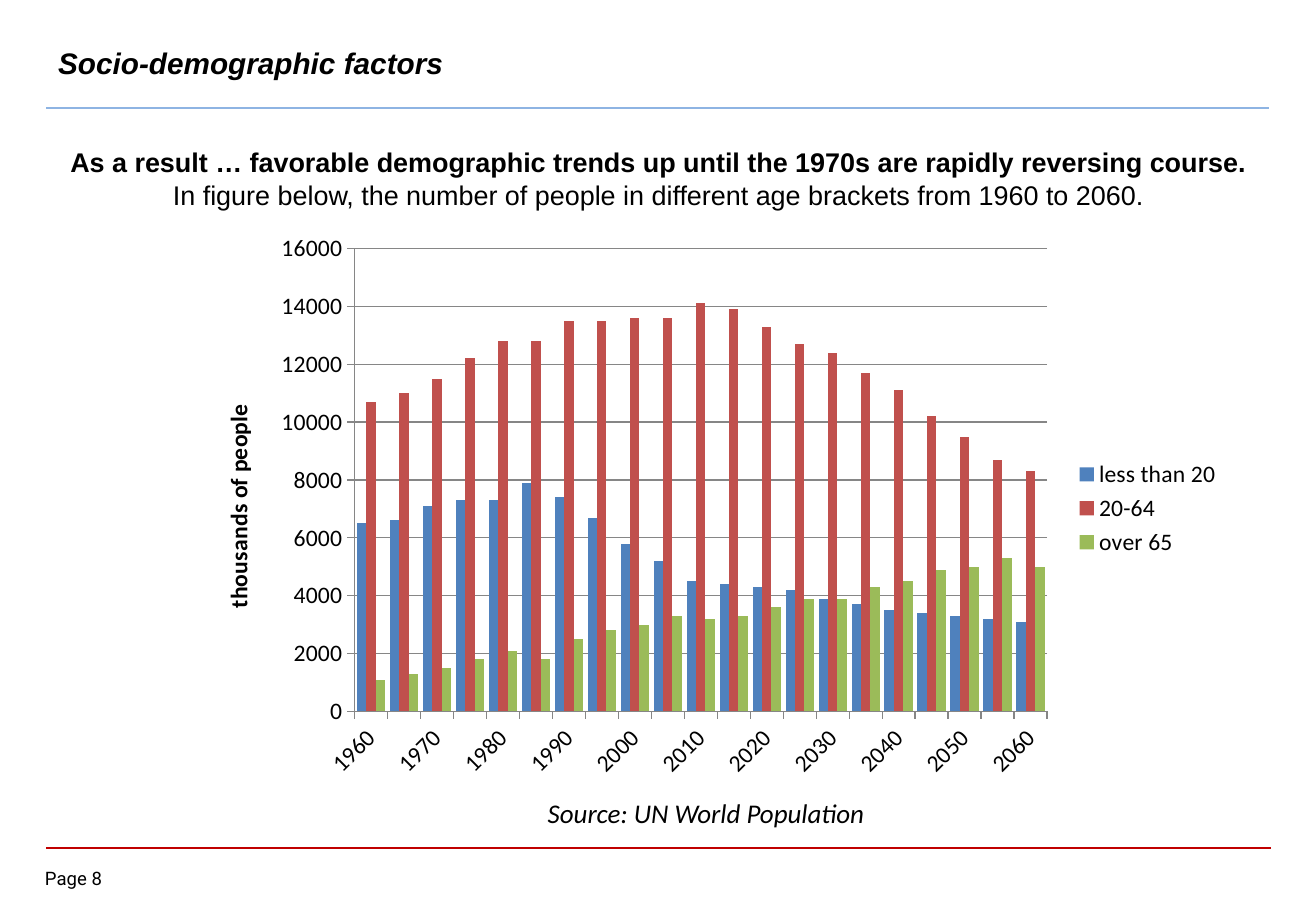
from dataclasses import dataclass

from lxml import etree
from pptx import Presentation
from pptx.chart.axis import _BaseAxis
from pptx.chart.chart import Chart
from pptx.chart.data import CategoryChartData
from pptx.dml.color import RGBColor
from pptx.enum.chart import XL_CHART_TYPE, XL_LEGEND_POSITION, XL_TICK_MARK
from pptx.enum.shapes import MSO_CONNECTOR
from pptx.enum.text import MSO_ANCHOR, PP_ALIGN
from pptx.oxml import parse_xml
from pptx.oxml.ns import nsdecls, qn
from pptx.slide import Slide
from pptx.text.text import Font
from pptx.util import Pt

EMU_PER_PX = 9144
LEFT, CENTER = PP_ALIGN.LEFT, PP_ALIGN.CENTER
TOP, MIDDLE = MSO_ANCHOR.TOP, MSO_ANCHOR.MIDDLE
STRAIGHT = MSO_CONNECTOR.STRAIGHT
COLUMNS = XL_CHART_TYPE.COLUMN_CLUSTERED
LEGEND_RIGHT = XL_LEGEND_POSITION.RIGHT
OUTSIDE = XL_TICK_MARK.OUTSIDE
BLACK = "000000"
AXIS_GRAY = "868686"


@dataclass(frozen=True)
class Rule:
    left: int
    right: int
    top: int
    color: str
    points: float


@dataclass(frozen=True)
class Line:
    text: str
    bold: bool = False
    italic: bool = False


@dataclass(frozen=True)
class AgeGroup:
    name: str
    color: str
    hundreds: tuple[int, ...]


RULES = (
    Rule(38, 1046, 698, "C00000", 1),
    Rule(38, 1044, 89, "8EB4E3", 1.5),
)
YEARS = range(1960, 2061, 5)
AGE_GROUPS = (
    AgeGroup("less than 20", "4F81BD", (
        65, 66, 71, 73, 73, 79, 74, 67, 58, 52, 45,
        44, 43, 42, 39, 37, 35, 34, 33, 32, 31)),
    AgeGroup("20-64", "C0504D", (
        107, 110, 115, 122, 128, 128, 135, 135, 136, 136, 141,
        139, 133, 127, 124, 117, 111, 102, 95, 87, 83)),
    AgeGroup("over 65", "9BBB59", (
        11, 13, 15, 18, 21, 18, 25, 28, 30, 33, 32,
        33, 36, 39, 39, 43, 45, 49, 50, 53, 50)),
)
PLOT_LAYOUT = {"x": 0.15, "y": 0.04, "w": 0.67, "h": 0.82}


def px(length: int) -> int:
    return length * EMU_PER_PX


def rgb(color: str) -> RGBColor:
    return RGBColor.from_string(color)


def style_font(font: Font, size: float, name: str,
               bold: bool = False, italic: bool = False) -> None:
    font.size = Pt(size)
    font.name = name
    font.bold = bold
    font.italic = italic
    font.color.rgb = rgb(BLACK)


def add_text(page: Slide, place: tuple[int, int, int, int], *lines: Line,
             size: float, font: str, align: PP_ALIGN = LEFT,
             anchor: MSO_ANCHOR = TOP, inset: bool = True) -> None:
    box = page.shapes.add_textbox(*map(px, place))
    frame = box.text_frame
    frame.word_wrap = True
    frame.vertical_anchor = anchor
    if not inset:
        frame.margin_left = frame.margin_right = 0
        frame.margin_top = frame.margin_bottom = 0
    for index, line in enumerate(lines):
        para = frame.add_paragraph() if index else frame.paragraphs[0]
        para.alignment = align
        span = para.add_run()
        span.text = line.text
        style_font(span.font, size, font, line.bold, line.italic)


def add_rule(page: Slide, rule: Rule) -> None:
    connector = page.shapes.add_connector(
        STRAIGHT, px(rule.left), px(rule.top), px(rule.right), px(rule.top))
    connector.line.color.rgb = rgb(rule.color)
    connector.line.width = Pt(rule.points)
    etree.SubElement(connector.element.spPr, qn("a:effectLst"))


def style_axis(axis: _BaseAxis) -> None:
    axis.major_tick_mark = OUTSIDE
    axis.format.line.color.rgb = rgb(AXIS_GRAY)
    axis.format.line.width = Pt(0.75)
    style_font(axis.tick_labels.font, 14, "Calibri")


def slant_alternate_years(chart: Chart) -> None:
    axis = chart.element.xpath(".//c:catAx")[0]
    body = axis.xpath("./c:txPr/a:bodyPr")[0]
    body.set("rot", "-2700000")
    body.set("vert", "horz")
    skip = parse_xml(f'<c:tickLblSkip {nsdecls("c")} val="2"/>')
    axis.find(qn("c:noMultiLvlLbl")).addprevious(skip)


def place_plot(chart: Chart) -> None:
    area = chart.element.xpath(".//c:plotArea")[0]
    for old in area.findall(qn("c:layout")):
        area.remove(old)
    modes = "".join(f'<c:{side}Mode val="edge"/>' for side in "xy")
    sizes = "".join(f'<c:{side} val="{share}"/>'
                    for side, share in PLOT_LAYOUT.items())
    area.insert(0, parse_xml(
        f'<c:layout {nsdecls("c")}><c:manualLayout>'
        f'<c:layoutTarget val="inner"/>{modes}{sizes}'
        '</c:manualLayout></c:layout>'))


def add_population_chart(page: Slide) -> None:
    data = CategoryChartData()
    data.categories = [str(year) for year in YEARS]
    for group in AGE_GROUPS:
        data.add_series(group.name, [count * 100 for count in group.hundreds])
    chart = page.shapes.add_chart(
        COLUMNS, *map(px, (164, 186, 851, 465)), data).chart
    style_font(chart.font, 14, "Calibri")
    chart.has_title = False
    chart.has_legend = True
    chart.legend.position = LEGEND_RIGHT
    chart.legend.include_in_layout = False

    plot = chart.plots[0]
    plot.gap_width = 50
    plot.overlap = 0
    plot.vary_by_categories = False
    for series, group in zip(plot.series, AGE_GROUPS):
        series.format.fill.solid()
        series.format.fill.fore_color.rgb = rgb(group.color)

    style_axis(chart.category_axis)
    slant_alternate_years(chart)
    values = chart.value_axis
    style_axis(values)
    values.minimum_scale, values.maximum_scale = 0, 16000
    values.major_unit = 2000
    values.has_major_gridlines = True
    values.major_gridlines.format.line.color.rgb = rgb(AXIS_GRAY)
    values.major_gridlines.format.line.width = Pt(0.75)
    para = values.axis_title.text_frame.paragraphs[0]
    span = para.add_run()
    span.text = "thousands of people"
    style_font(span.font, 14, "Calibri", bold=True)
    place_plot(chart)


def main() -> None:
    deck = Presentation()
    deck.slide_width, deck.slide_height = px(1083), px(750)
    page = deck.slides.add_slide(deck.slide_layouts[6])
    for rule in RULES:
        add_rule(page, rule)
    add_text(page, (37, 714, 73, 22), Line("Page 8"),
             size=11, font="Roboto", inset=False)
    add_text(page, (30, 115, 1024, 91),
             Line("As a result … favorable demographic trends up until "
                  "the 1970s are rapidly reversing course.", bold=True),
             Line("In figure below, the number of people in different "
                  "age brackets from 1960 to 2060."),
             size=16, font="Arial", align=CENTER)
    add_population_chart(page)
    add_text(page, (38, 28, 765, 47),
             Line("Socio-demographic factors", bold=True, italic=True),
             size=17.6, font="Arial", anchor=MIDDLE)
    add_text(page, (329, 651, 504, 37),
             Line("Source: UN World Population", italic=True),
             size=16, font="Calibri", align=CENTER)
    deck.save("out.pptx")


if __name__ == "__main__":
    main()
